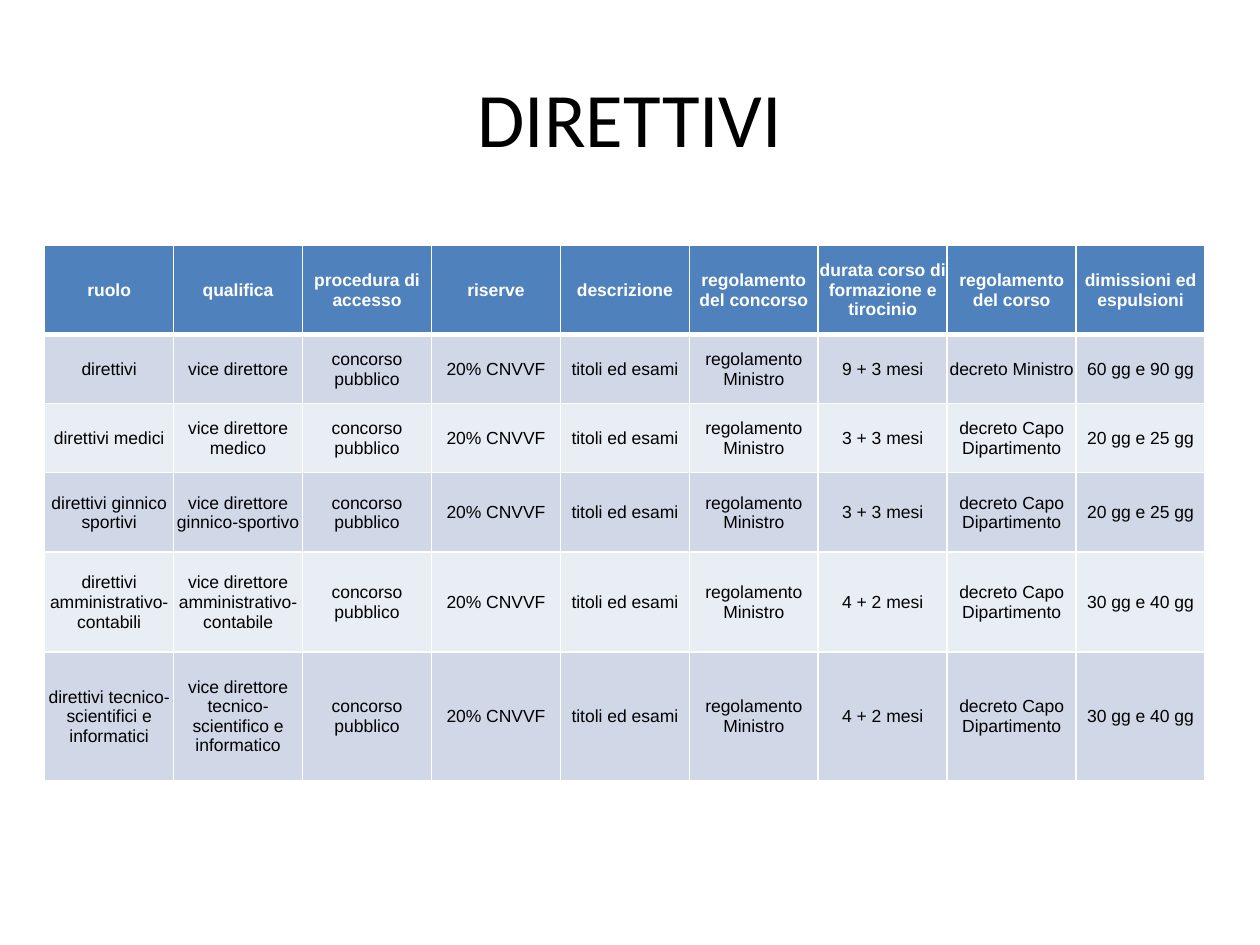
from lxml.etree import SubElement
from pptx import Presentation
from pptx.dml.color import RGBColor
from pptx.enum.text import MSO_ANCHOR, PP_ALIGN
from pptx.oxml.ns import qn
from pptx.util import Pt

WHITE = RGBColor(0xFF, 0xFF, 0xFF)
BLACK = RGBColor(0x00, 0x00, 0x00)
HEADER_BLUE = RGBColor(0x4F, 0x81, 0xBD)
BAND_DARK = RGBColor(0xD0, 0xD8, 0xE8)
BAND_LIGHT = RGBColor(0xE9, 0xED, 0xF4)

COLUMN_WIDTH = 73.7
ROW_HEIGHTS = [51, 39.5, 39.5, 45.5, 57, 73.5]
HEADERS = [
    "ruolo", "qualifica", "procedura di accesso", "riserve", "descrizione",
    "regolamento del concorso", "durata corso di formazione e tirocinio",
    "regolamento del corso", "dimissioni ed espulsioni",
]
# The middle columns read the same for every role.
COMMON = ["concorso pubblico", "20% CNVVF", "titoli ed esami", "regolamento Ministro"]
CAPO = "decreto Capo Dipartimento"
# ruolo, qualifica, durata, regolamento del corso, dimissioni
ROLES = [
    ("direttivi", "vice direttore",
     "9 + 3 mesi", "decreto Ministro", "60 gg e 90 gg"),
    ("direttivi medici", "vice direttore medico",
     "3 + 3 mesi", CAPO, "20 gg e 25 gg"),
    ("direttivi ginnico sportivi", "vice direttore ginnico-sportivo",
     "3 + 3 mesi", CAPO, "20 gg e 25 gg"),
    ("direttivi amministrativo-contabili", "vice direttore amministrativo-contabile",
     "4 + 2 mesi", CAPO, "30 gg e 40 gg"),
    ("direttivi tecnico-scientifici e informatici",
     "vice direttore tecnico-scientifico e informatico",
     "4 + 2 mesi", CAPO, "30 gg e 40 gg"),
]


def write(tf, text, font, size, color, bold=False):
    p = tf.paragraphs[0]
    p.alignment = PP_ALIGN.CENTER
    r = p.add_run()
    r.text = text
    r.font.name = font
    r.font.size = Pt(size)
    r.font.bold = bold
    r.font.color.rgb = color


def add_title(s, text):
    tf = s.shapes.add_textbox(Pt(36), Pt(21.6), Pt(648), Pt(90)).text_frame
    tf.word_wrap = True
    tf.vertical_anchor = MSO_ANCHOR.MIDDLE
    write(tf, text, "Calibri", 44, BLACK)


def set_borders(cell, top, bottom):
    """Draw white borders, with the sides 1 point wide."""
    tc_pr = cell._tc.get_or_add_tcPr()
    for tag, width in (("a:lnL", 1), ("a:lnR", 1), ("a:lnT", top), ("a:lnB", bottom)):
        ln = SubElement(tc_pr, qn(tag), w=str(Pt(width)))
        fill = SubElement(ln, qn("a:solidFill"))
        SubElement(fill, qn("a:srgbClr"), val=str(WHITE))


def format_cell(cell, text, row):
    header = row == 0
    cell.vertical_anchor = MSO_ANCHOR.MIDDLE
    cell.margin_left = cell.margin_right = cell.margin_top = Pt(0.7)
    cell.margin_bottom = Pt(0)
    set_borders(cell, top=3 if row == 1 else 1, bottom=3 if header else 1)
    cell.fill.solid()
    band = BAND_DARK if row % 2 else BAND_LIGHT
    cell.fill.fore_color.rgb = HEADER_BLUE if header else band
    write(cell.text_frame, text, "Arial", 10, WHITE if header else BLACK, header)


def add_roles_table(s):
    rows = [HEADERS] + [[*role[:2], *COMMON, *role[2:]] for role in ROLES]
    table = s.shapes.add_table(
        len(rows), len(HEADERS), Pt(25.5), Pt(140),
        Pt(COLUMN_WIDTH * len(HEADERS)), Pt(sum(ROW_HEIGHTS)),
    ).table
    for column in table.columns:
        column.width = Pt(COLUMN_WIDTH)
    for i, (texts, height) in enumerate(zip(rows, ROW_HEIGHTS)):
        table.rows[i].height = Pt(height)
        for j, text in enumerate(texts):
            format_cell(table.cell(i, j), text, i)


def main():
    prs = Presentation()
    prs.slide_width, prs.slide_height = Pt(720), Pt(540)
    s = prs.slides.add_slide(prs.slide_layouts[6])
    add_roles_table(s)
    add_title(s, "DIRETTIVI")
    prs.save("out.pptx")


if __name__ == "__main__":
    main()
